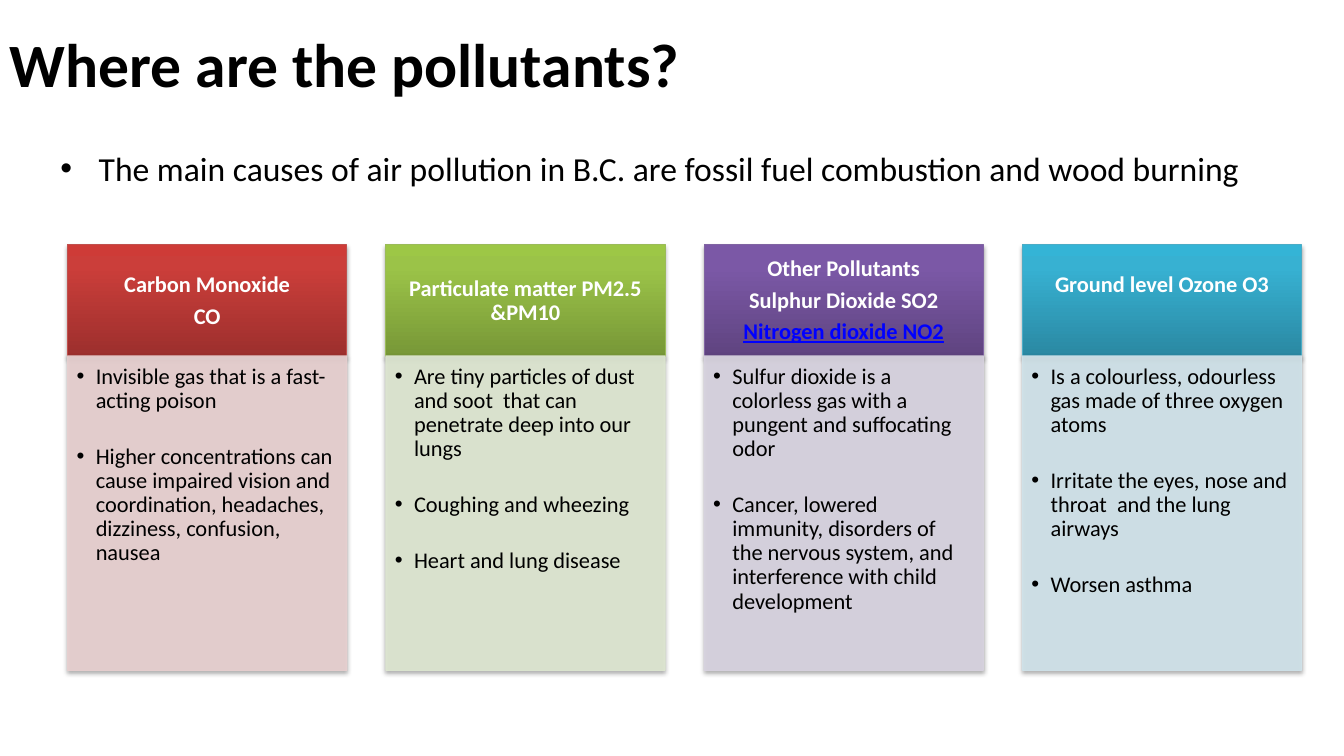
"""Builds a slide on where the main air pollutants come from and what they do."""
from copy import deepcopy
from dataclasses import dataclass

from pptx import Presentation
from pptx.dml.color import RGBColor
from pptx.enum.shapes import MSO_SHAPE
from pptx.enum.text import MSO_ANCHOR, PP_ALIGN
from pptx.oxml import parse_xml
from pptx.oxml.ns import nsdecls, qn
from pptx.util import Inches, Pt


@dataclass(frozen=True)
class Theme:
    font: str = "Calibri"
    title_size: int = 44
    lead_size: int = 24
    card_size: int = 16
    ink: str = "000000"
    header_ink: str = "FFFFFF"
    accent_ink: str = "0000FF"


theme = Theme()


def write(box, lines, size, color=theme.ink, bold=False, align=PP_ALIGN.LEFT,
          anchor=MSO_ANCHOR.TOP, insets=(0.1, 0.05, 0.1, 0.05), hanging=0,
          line_spacing=1.0, gap=0, underlined=()):
    """Fills a shape or text box with one paragraph per line."""
    frame = box.text_frame
    frame.word_wrap = True
    frame.vertical_anchor = anchor
    (frame.margin_left, frame.margin_top,
     frame.margin_right, frame.margin_bottom) = map(Inches, insets)
    for index, line in enumerate(lines):
        para = frame.add_paragraph() if index else frame.paragraphs[0]
        if hanging:
            properties = para._p.get_or_add_pPr()
            properties.set("marL", str(Inches(hanging)))
            properties.set("indent", str(-Inches(hanging)))
            for tag in (f'<a:buFont {nsdecls("a")} typeface="Arial"/>',
                        f'<a:buChar {nsdecls("a")} char="•"/>'):
                properties.append(parse_xml(tag))
        para.alignment = align
        para.line_spacing = line_spacing
        para.space_after = Pt(gap if index < len(lines) - 1 else 0)
        span = para.add_run()
        span.text = line
        span.font.name = theme.font
        span.font.size = Pt(size)
        span.font.bold = bold
        span.font.underline = line in underlined
        span.font.color.rgb = RGBColor.from_string(
            theme.accent_ink if line in underlined else color)


def add_panel(left, top, width, height, fills, outline, opacity=100):
    """Adds a shadowed rectangle with a solid fill or an upward gradient."""
    panel = page.shapes.add_shape(MSO_SHAPE.RECTANGLE, Inches(left), Inches(top),
                                  Inches(width), Inches(height))
    if len(fills) == 1:
        panel.fill.solid()
        panel.fill.fore_color.rgb = RGBColor.from_string(fills[0])
    else:
        panel.fill.gradient()
        panel.fill.gradient_angle = 90
        stop_list = panel._element.spPr.find(f'.//{qn("a:gsLst")}')
        stop_list.append(deepcopy(stop_list[-1]))
        for stop, position, color in zip(panel.fill.gradient_stops, (0, 0.8, 1), fills):
            stop.position = position
            stop.color.rgb = RGBColor.from_string(color)
    panel.line.color.rgb = RGBColor.from_string(outline)
    panel.line.width = Pt(0.75)
    if opacity < 100:
        for color in panel._element.spPr.iter(qn("a:srgbClr")):
            color.append(parse_xml(f'<a:alpha {nsdecls("a")} val="{opacity * 1000}"/>'))
    panel.shadow.inherit = False
    panel._element.spPr.find(qn("a:effectLst")).append(parse_xml(
        f'<a:outerShdw {nsdecls("a")} blurRad="{Pt(3.1)}" dist="{Pt(1.8)}" '
        'dir="5400000" rotWithShape="0"><a:srgbClr val="000000">'
        '<a:alpha val="35000"/></a:srgbClr></a:outerShdw>'))
    return panel


deck = Presentation()
deck.slide_width, deck.slide_height = Inches(13.33), Inches(7.5)
page = deck.slides.add_slide(deck.slide_layouts[6])

title = page.shapes.add_textbox(Inches(0), Inches(0), Inches(12), Inches(1.25))
write(title, ["Where are the pollutants?"], theme.title_size, bold=True,
      anchor=MSO_ANCHOR.MIDDLE)

lead = page.shapes.add_textbox(Inches(0.5), Inches(1.42), Inches(12.42), Inches(1))
write(lead, ["The main causes of air pollution in B.C. are fossil fuel combustion "
             "and wood burning"], theme.lead_size, hanging=0.38)

cards = [
    dict(header=["Carbon Monoxide", "CO"],
         gradient=("9C2F2D", "CB3E3A", "CE3B37"), outline="C0504D", tint="E8D0D0",
         effects=["Invisible gas that is a fast-acting poison",
                  "Higher concentrations can cause impaired vision and coordination, "
                  "headaches, dizziness, confusion, nausea"]),
    dict(header=["Particulate matter PM2.5 &PM10"],
         gradient=("779737", "9BC348", "9DC746"), outline="9BBB59", tint="DEE7D1",
         effects=["Are tiny particles of dust and soot  that can penetrate deep into "
                  "our lungs",
                  "Coughing and wheezing",
                  "Heart and lung disease"]),
    dict(header=["Other Pollutants", "Sulphur Dioxide SO2", "Nitrogen dioxide NO2"],
         gradient=("5F4480", "7B58A6", "7C57A8"), outline="8064A2", tint="D8D3E0",
         effects=["Sulfur dioxide is a colorless gas with a pungent and suffocating odor",
                  "Cancer, lowered immunity, disorders of the nervous system, and "
                  "interference with child development"]),
    dict(header=["Ground level Ozone O3"], header_bottom=0.39,
         gradient=("2A88A2", "37B1D2", "34B4D6"), outline="4BACC6", tint="D0E3EA",
         effects=["Is a colourless, odourless gas made of three oxygen atoms",
                  "Irritate the eyes, nose and throat  and the lung airways",
                  "Worsen asthma"]),
]
card_width, first_left, last_left = 2.77, 0.67, 10.14
card_step = (last_left - first_left) / (len(cards) - 1)

for index, card in enumerate(cards):
    left = first_left + index * card_step
    header = add_panel(left, 2.43, card_width, 1.11, card["gradient"], card["outline"])
    write(header, card["header"], theme.card_size, color=theme.header_ink, bold=True,
          align=PP_ALIGN.CENTER, anchor=MSO_ANCHOR.MIDDLE,
          insets=(0.12, 0.07, 0.12, card.get("header_bottom", 0.07)),
          line_spacing=0.9, gap=5.5, underlined=("Nitrogen dioxide NO2",))
    body = add_panel(left, 3.53, card_width, 3.12, [card["tint"]], card["tint"], opacity=90)
    write(body, card["effects"], theme.card_size, insets=(0.09, 0.09, 0.12, 0.14),
          hanging=0.19, line_spacing=0.9, gap=22.5)

deck.save("out.pptx")
